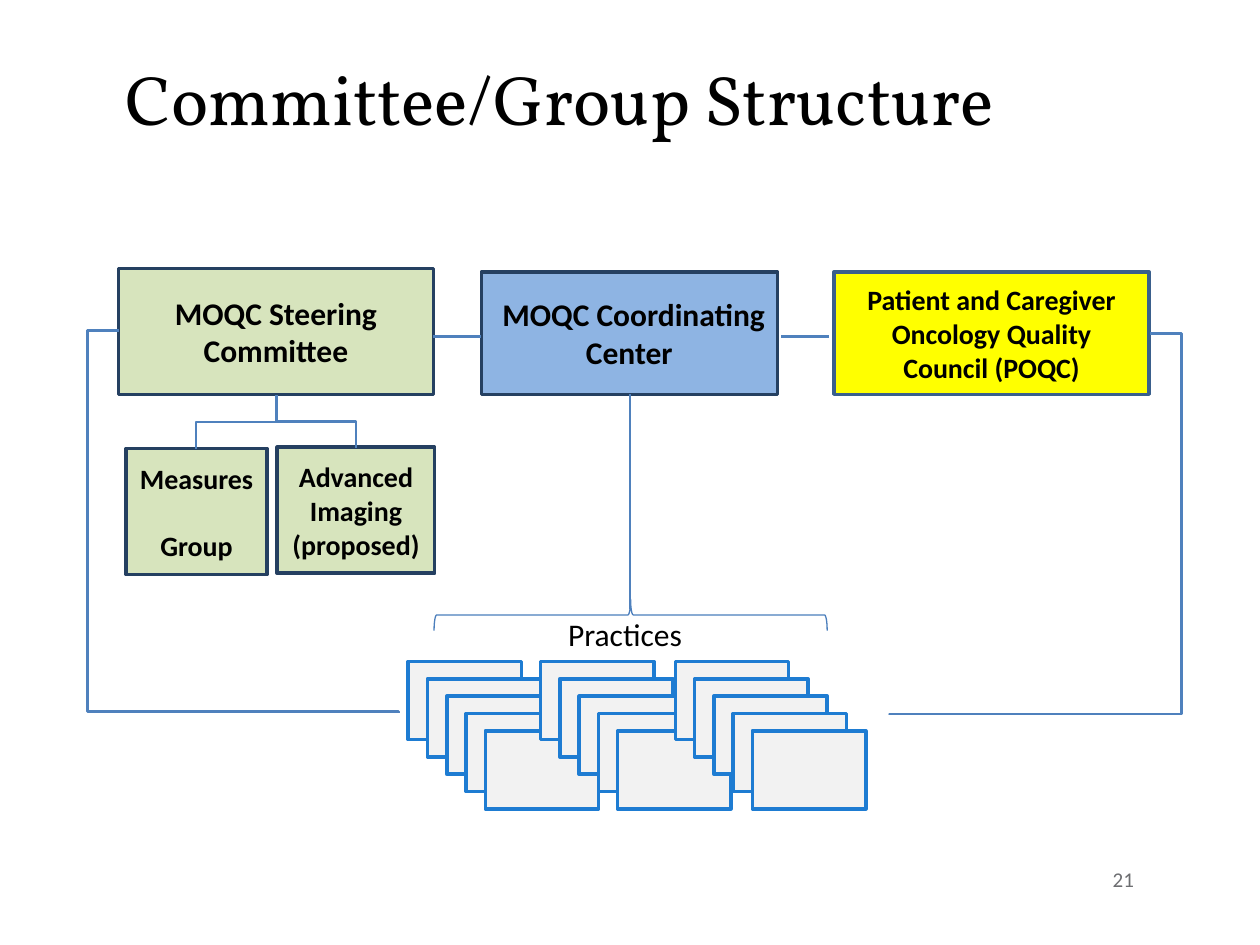
from pptx import Presentation
from pptx.dml.color import RGBColor
from pptx.enum.shapes import MSO_CONNECTOR as LINK, MSO_SHAPE as SHAPE
from pptx.enum.text import MSO_ANCHOR as ANCHOR, MSO_AUTO_SIZE as FIT, PP_ALIGN as ALIGN
from pptx.oxml.ns import qn
from pptx.util import Inches, Pt
from lxml import etree

COLORS = {
    "black": "000000", "gray": "6D6E71", "navy": "254061", "steel": "3A5F8C",
    "green": "D7E4BD", "blue": "8EB4E3", "yellow": "FFFF00",
    "card": "F2F2F2", "card edge": "1E7CD2", "brace": "4B7EBC", "link": "4F81BD",
}


def style_para(para, size, color="black", bold=False, align=None, name="Calibri"):
    para.alignment = align
    font = para.font
    font.name, font.size, font.bold = name, Pt(size), bold
    font.color.rgb = RGBColor.from_string(COLORS[color])


def add_box(left, top, width, height, fill, edge):
    box = page.shapes.add_shape(SHAPE.RECTANGLE, Inches(left), Inches(top),
                                Inches(width), Inches(height))
    box.shadow.inherit = False
    box.fill.solid()
    box.fill.fore_color.rgb = RGBColor.from_string(COLORS[fill])
    box.line.color.rgb = RGBColor.from_string(COLORS[edge])
    box.line.width = Pt(2)
    return box


deck = Presentation()
deck.slide_width, deck.slide_height = Inches(10), Inches(7.5)
page = deck.slides.add_slide(deck.slide_layouts[6])

# Title, page number and practices label
labels = [
    ("Committee/Group Structure", 1, 0.44, 8.17, 0.67, 40, "black", "Vollkorn",
     ALIGN.LEFT, ANCHOR.TOP, 0),
    ("21", 6.67, 6.68, 2.33, 0.4, 12, "gray", "Calibri", ALIGN.RIGHT, ANCHOR.BOTTOM, 0),
    ("Practices", 4.41, 4.83, 1.18, 0.4, 18, "black", "Calibri",
     ALIGN.LEFT, ANCHOR.TOP, None),
]
for text, left, top, width, height, size, color, name, align, anchor, inset in labels:
    box = page.shapes.add_textbox(Inches(left), Inches(top), Inches(width), Inches(height))
    frame = box.text_frame
    frame.word_wrap = inset == 0
    frame.auto_size = FIT.NONE
    frame.vertical_anchor = anchor
    if inset == 0:
        frame.margin_left = frame.margin_right = 0
        frame.margin_top = frame.margin_bottom = 0
    frame.text = text
    style_para(frame.paragraphs[0], size, color, align=align, name=name)

# Committees and groups; "\v" is a line break
groups = [
    (3.82, 2.16, 2.35, 0.97, "blue", "navy", 18,
     [("MOQC Coordinating", ALIGN.RIGHT), ("Center", ALIGN.CENTER)]),
    (0.94, 2.13, 2.5, 1, "green", "navy", 18,
     [("MOQC Steering Committee", ALIGN.CENTER)]),
    (6.62, 2.16, 2.5, 0.97, "yellow", "steel", 16,
     [("Patient and Caregiver Oncology Quality Council (POQC)", ALIGN.CENTER)]),
    (1, 3.56, 1.12, 1, "green", "navy", 16, [("Measures \vGroup", ALIGN.CENTER)]),
    (2.2, 3.55, 1.25, 1, "green", "navy", 16,
     [("Advanced Imaging\v(proposed)", ALIGN.CENTER)]),
]
for left, top, width, height, fill, edge, size, lines in groups:
    frame = add_box(left, top, width, height, fill, edge).text_frame
    frame.word_wrap = True
    frame.vertical_anchor = ANCHOR.MIDDLE
    for index, (text, align) in enumerate(lines):
        para = frame.add_paragraph() if index else frame.paragraphs[0]
        para.text = text
        style_para(para, size, bold=True, align=align)

# Three cascading stacks of practices
for stack_left in (3.24, 4.29, 5.36):
    for step in range(5):
        add_box(stack_left + step * 0.153, 5.25 + step * 0.1375, 0.9, 0.62,
                "card", "card edge")

# Brace over the practices
brace = page.shapes.add_shape(SHAPE.RIGHT_BRACE, Inches(4.88), Inches(3.32),
                              Inches(0.25), Inches(3.12))
brace.rotation = 270
brace.shadow.inherit = False
brace.fill.background()
brace.line.color.rgb = RGBColor.from_string(COLORS["brace"])
brace.line.width = Pt(0.75)

# Links: left, top, width, height, quarter turns, flips, preset, bends
links = [
    (5, 3.13, 0, 1.7, 0, "", "line", []),
    (3.44, 2.67, 0.38, 0, 0, "", "line", []),
    (6.2, 2.67, 0.38, 0, 0, "", "line", []),
    (2.3, 3.03, 0.42, 0.63, 3, "H", "bentConnector3", []),
    (1.66, 3.03, 0.43, 0.64, 1, "", "bentConnector3", []),
    (0.54, 3.03, 3.03, 2.22, 3, "V", "bentConnector4", [200, 111300]),
    (6.58, 3.12, 3.02, 2.07, 1, "HV", "bentConnector4", [-100, 112100]),
]
for left, top, width, height, turns, flips, preset, bends in links:
    kind = LINK.STRAIGHT if preset == "line" else LINK.ELBOW
    link = page.shapes.add_connector(kind, Inches(left), Inches(top),
                                     Inches(left + width), Inches(top + height))
    link.line.color.rgb = RGBColor.from_string(COLORS["link"])
    link.line.width = Pt(1.5)
    props = link._element.spPr
    etree.SubElement(props, qn("a:effectLst"))
    frame = props.find(qn("a:xfrm"))
    if turns:
        frame.set("rot", str(turns * 90 * 60000))
    for flip in flips:
        frame.set("flip" + flip, "1")
    shape = props.find(qn("a:prstGeom"))
    shape.set("prst", preset)
    guides = shape.find(qn("a:avLst"))
    for number, bend in enumerate(bends, 1):
        etree.SubElement(guides, qn("a:gd"), name=f"adj{number}", fmla=f"val {bend}")

deck.save("out.pptx")
